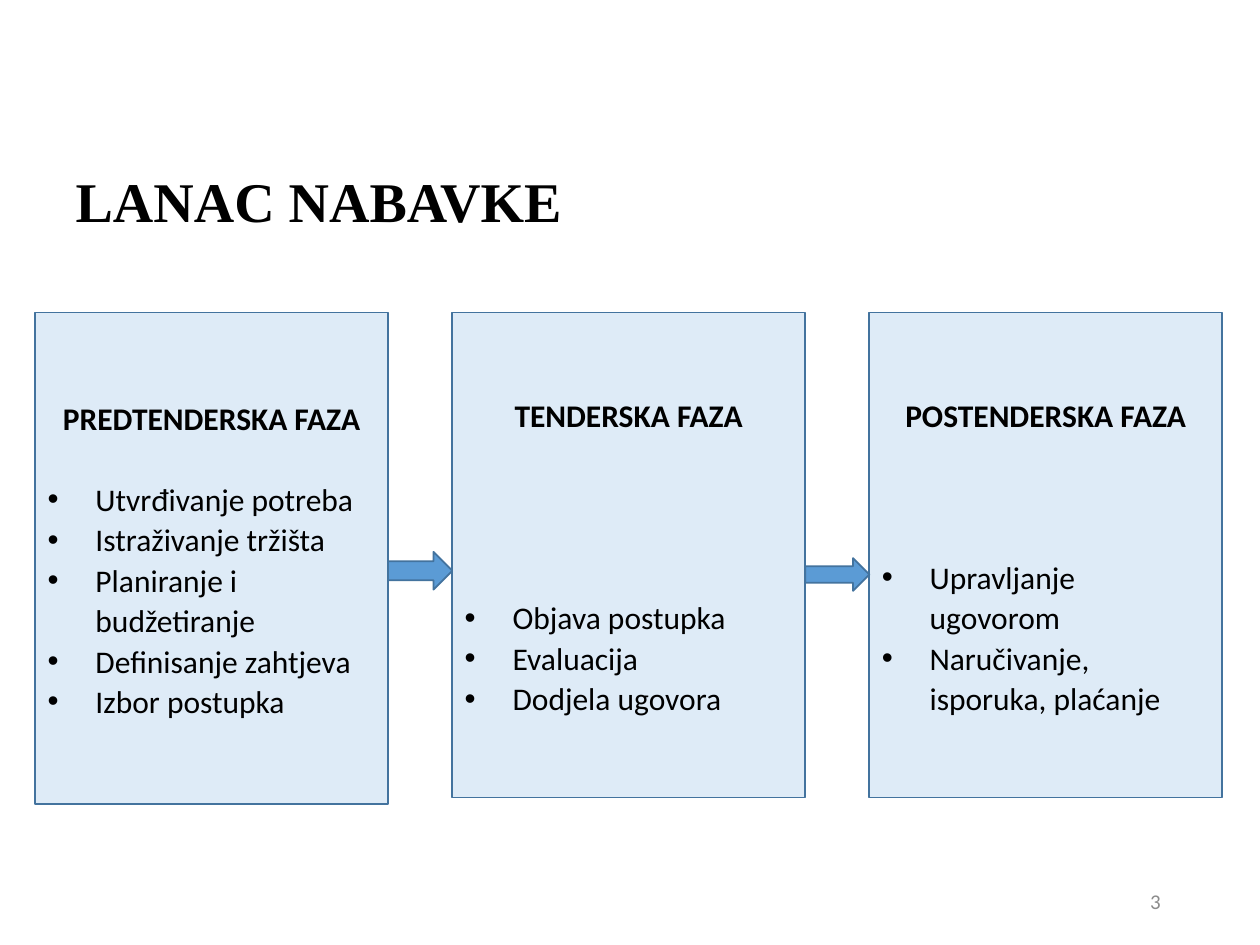
import pptx
import pptx.dml.color
import pptx.enum.shapes
import pptx.enum.text
import pptx.util
from lxml import etree
from pptx.util import Inches

RGBColor = pptx.dml.color.RGBColor
Align = pptx.enum.text.PP_ALIGN
Shape = pptx.enum.shapes.MSO_SHAPE

BLACK = RGBColor(0x00, 0x00, 0x00)
GRAY = RGBColor(0x8C, 0x8C, 0x8C)
PALE_BLUE = RGBColor(0xDE, 0xEB, 0xF7)
BLUE = RGBColor(0x5B, 0x9B, 0xD5)
OUTLINE = RGBColor(0x43, 0x73, 0x9E)

PHASE_LEFT, PHASE_TOP, PHASE_WIDTH, GAP = 0.28, 2.48, 2.8, 0.51
LINE_HEIGHT = 23.2

PHASES = [
    ("PREDTENDERSKA FAZA", 3.9, 1,
     ["Utvrđivanje potreba", "Istraživanje tržišta", "Planiranje i budžetiranje",
      "Definisanje zahtjeva", "Izbor postupka"]),
    ("TENDERSKA FAZA", 3.85, 4,
     ["Objava postupka", "Evaluacija", "Dodjela ugovora"]),
    ("POSTENDERSKA FAZA", 3.85, 3,
     ["Upravljanje ugovorom", "Naručivanje, isporuka, plaćanje"]),
]
ARROWS = [(4.38, 0.3), (4.43, 0.26)]


class SlideBuilder:
    def __init__(self, page):
        self.page = page

    def style(self, para, size, color=BLACK, bold=False, name="Calibri", align=Align.LEFT):
        para.alignment = align
        para.font.size = pptx.util.Pt(size)
        para.font.name = name
        para.font.bold = bold
        para.font.color.rgb = color

    def bullet(self, para):
        properties = para._p.get_or_add_pPr()
        properties.set("marL", str(Inches(0.38)))
        properties.set("indent", str(-Inches(0.38)))
        namespace = pptx.oxml.ns.qn("a:buFont")
        etree.SubElement(properties, namespace, typeface="Arial")
        etree.SubElement(properties, pptx.oxml.ns.qn("a:buChar"), char="•")

    def title(self, text, left, top, width, height):
        box = self.page.shapes.title
        box.left, box.top = Inches(left), Inches(top)
        box.width, box.height = Inches(width), Inches(height)
        frame = box.text_frame
        frame.text = text
        frame.auto_size = pptx.enum.text.MSO_AUTO_SIZE.NONE
        frame.vertical_anchor = pptx.enum.text.MSO_ANCHOR.MIDDLE
        para = frame.paragraphs[0]
        para.line_spacing = 0.9
        self.style(para, 32, bold=True, name="Times New Roman")

    def page_number(self, text, left, top, width, height):
        box = self.page.shapes.add_textbox(
            Inches(left), Inches(top), Inches(width), Inches(height))
        frame = box.text_frame
        frame.word_wrap = True
        frame.vertical_anchor = pptx.enum.text.MSO_ANCHOR.MIDDLE
        frame.text = text
        self.style(frame.paragraphs[0], 12, GRAY, align=Align.RIGHT)

    def shape(self, kind, left, top, width, height, fill):
        box = self.page.shapes.add_shape(
            kind, Inches(left), Inches(top), Inches(width), Inches(height))
        box.shadow.inherit = False
        box.fill.solid()
        box.fill.fore_color.rgb = fill
        box.line.color.rgb = OUTLINE
        box.line.width = pptx.util.Pt(1)
        return box

    def phase(self, left, height, heading, gap_lines, items):
        box = self.shape(Shape.RECTANGLE, left, PHASE_TOP, PHASE_WIDTH, height, PALE_BLUE)
        frame = box.text_frame
        frame.word_wrap = True
        frame.vertical_anchor = pptx.enum.text.MSO_ANCHOR.MIDDLE
        para = frame.paragraphs[0]
        para.text = heading
        para.line_spacing = 1.07
        para.space_after = pptx.util.Pt(gap_lines * LINE_HEIGHT)
        self.style(para, 18, bold=True, align=Align.CENTER)
        for item in items:
            para = frame.add_paragraph()
            para.text = item
            para.line_spacing = 1.07
            self.bullet(para)
            self.style(para, 18)
        para.space_after = pptx.util.Pt(8)

    def arrow(self, left, top, height):
        self.shape(Shape.RIGHT_ARROW, left, top, GAP, height, BLUE)


def main():
    deck = pptx.Presentation()
    deck.slide_width, deck.slide_height = Inches(10), Inches(7.5)
    builder = SlideBuilder(deck.slides.add_slide(deck.slide_layouts[5]))
    builder.title("LANAC NABAVKE", 0.5, 1.31, 9, 0.63)
    builder.page_number("3", 7.06, 6.95, 2.25, 0.4)
    step = PHASE_WIDTH + GAP
    for index, (heading, height, gap_lines, items) in enumerate(PHASES):
        builder.phase(PHASE_LEFT + index * step, height, heading, gap_lines, items)
    for index, (top, height) in enumerate(ARROWS):
        builder.arrow(PHASE_LEFT + PHASE_WIDTH + index * step, top, height)
    deck.save("out.pptx")


if __name__ == "__main__":
    main()
